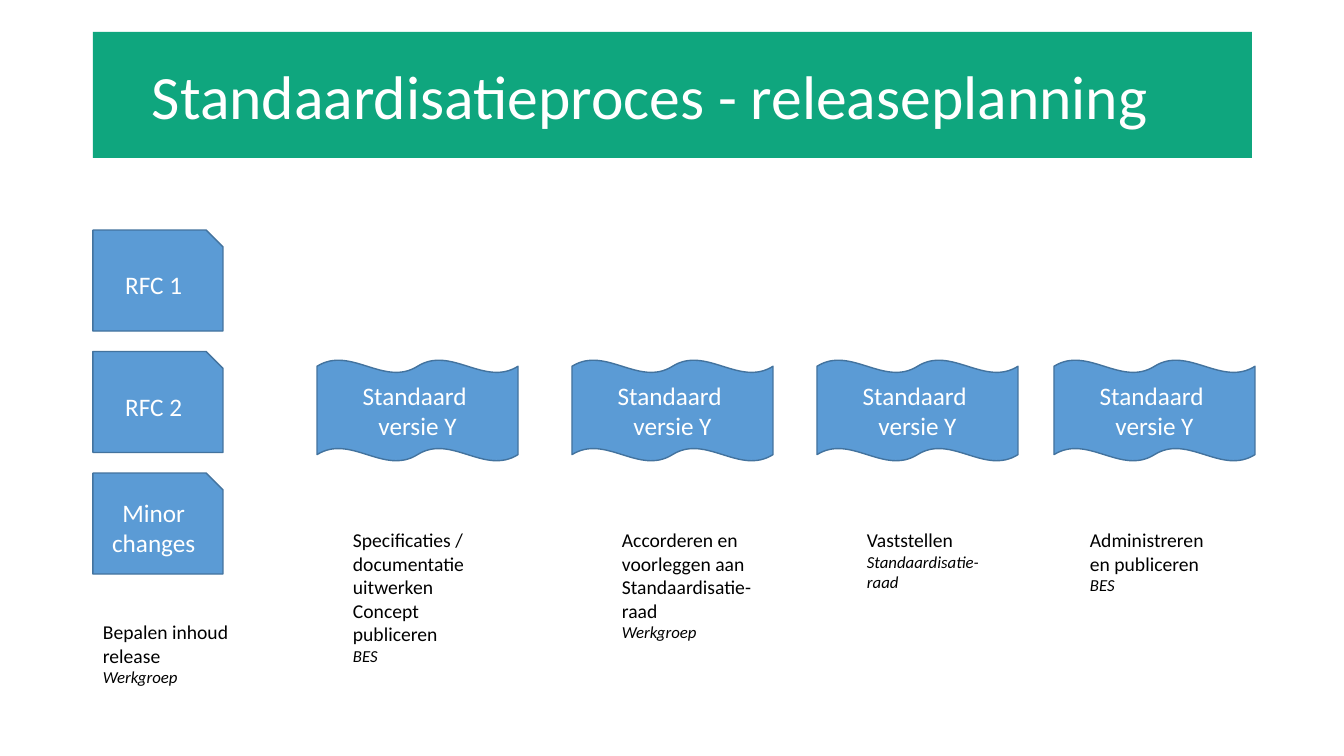
from pptx import Presentation
from pptx.dml.color import RGBColor
from pptx.enum.shapes import MSO_SHAPE
from pptx.enum.text import MSO_ANCHOR, MSO_AUTO_SIZE, PP_ALIGN
from pptx.util import Pt

RECTANGLE = MSO_SHAPE.RECTANGLE
SNIPPED = MSO_SHAPE.SNIP_1_RECTANGLE
WAVE = MSO_SHAPE.DOUBLE_WAVE
MIDDLE, TOP = MSO_ANCHOR.MIDDLE, MSO_ANCHOR.TOP
LEFT, CENTER = PP_ALIGN.LEFT, PP_ALIGN.CENTER
GROW = MSO_AUTO_SIZE.SHAPE_TO_FIT_TEXT

TITLE = "Standaardisatieproces - releaseplanning"
CHANGES = ["RFC 1", "RFC 2", "Minor changes"]
STANDARD = ["Standaard ", "versie Y"]
WAVE_LEFTS = [317, 572, 817, 1054]
# left, top, width, height, activities, responsible party
STEPS = [
    (93, 615, 149, 78, ["Bepalen inhoud release"], "Werkgroep"),
    (343, 523, 149, 149,
     ["Specificaties / documentatie uitwerken", "Concept publiceren"], "BES"),
    (612, 523, 155, 146,
     ["Accorderen en voorleggen aan Standaardisatie-raad"], "Werkgroep"),
    (857, 523, 149, 95, ["Vaststellen"], "Standaardisatie-raad"),
    (1080, 523, 149, 99, ["Administreren en publiceren"], "BES"),
]

COLORS = {"banner": "0FA67E", "block": "5B9BD5", "edge": "43739E",
          "light": "FFFFFF", "dark": "000000"}
FONT = "Calibri"
EMU_PER_PX = 914400 / 100.8
MARGIN = 93
CHANGE_TOP, CHANGE_PITCH = 230, 121.5
TITLE_INDENT = 49


def px(length):
    return round(length * EMU_PER_PX)


def color(name):
    return RGBColor.from_string(COLORS[name])


def write(frame, lines, ink, align, anchor):
    """Fill a text frame with (text, size, italic) lines."""
    frame.word_wrap = True
    frame.vertical_anchor = anchor
    for index, (text, size, italic) in enumerate(lines):
        paragraph = frame.add_paragraph() if index else frame.paragraphs[0]
        paragraph.alignment = align
        run = paragraph.add_run()
        run.text = text
        style = {"name": FONT, "size": Pt(size), "italic": italic}
        for attribute, value in style.items():
            setattr(run.font, attribute, value)
        run.font.color.rgb = color(ink)


def add_block(slide, kind, box, fill, edge, lines, align):
    block = slide.shapes.add_shape(kind, *map(px, box))
    block.shadow.inherit = False
    block.fill.solid()
    block.fill.fore_color.rgb = color(fill)
    if edge:
        block.line.color.rgb = color(edge)
        block.line.width = Pt(1)
    else:
        block.line.fill.background()
    write(block.text_frame, lines, "light", align, MIDDLE)
    return block


def main():
    deck = Presentation()
    deck.slide_width, deck.slide_height = px(1344), px(756)
    slide = deck.slides.add_slide(deck.slide_layouts[6])

    banner = add_block(slide, RECTANGLE, (MARGIN, 32, 1159, 126), "banner", None,
                       [(TITLE, 44, False)], LEFT)
    indent = banner.text_frame.paragraphs[0]._p.get_or_add_pPr()
    indent.set("marL", str(px(TITLE_INDENT)))

    for row, change in enumerate(CHANGES):
        top = CHANGE_TOP + row * CHANGE_PITCH
        add_block(slide, SNIPPED, (MARGIN, top, 130, 101), "block", "edge",
                  [(change, 18, False)], CENTER)

    for left in WAVE_LEFTS:
        add_block(slide, WAVE, (left, 360, 201, 101), "block", "edge",
                  [(line, 18, False) for line in STANDARD], CENTER)

    for *box, activities, party in STEPS:
        caption = slide.shapes.add_textbox(*map(px, box)).text_frame
        lines = [(activity, 14, False) for activity in activities]
        write(caption, lines + [(party, 12, True)], "dark", LEFT, TOP)
        caption.auto_size = GROW

    deck.save("out.pptx")


if __name__ == "__main__":
    main()
